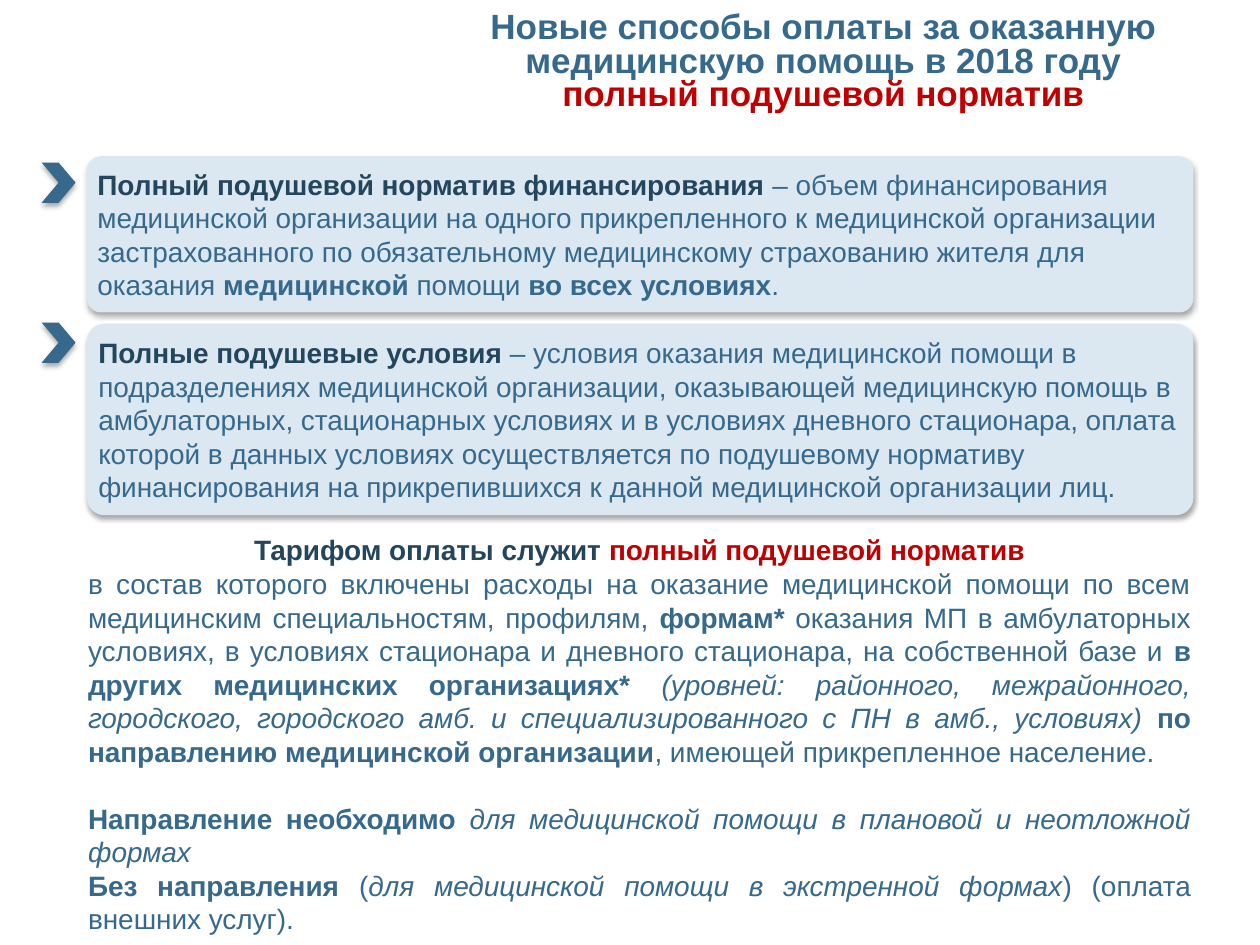
from dataclasses import dataclass

from lxml import etree
from pptx import Presentation
from pptx.dml.color import RGBColor
from pptx.enum import shapes, text
from pptx.util import Pt


@dataclass(frozen=True)
class Theme:
    font: str = "Arial"
    head: int = 20
    body: int = 16
    blue: str = "36698C"
    dark: str = "24465D"
    red: str = "C00000"
    pale: str = "DBE8F1"


theme = Theme()
KIND = shapes.MSO_SHAPE
ALIGN = text.PP_ALIGN
SHADE = (
    '<a:effectLst xmlns:a="http://schemas.openxmlformats.org/drawingml/2006/main">'
    '<a:outerShdw blurRad="38100" dist="22860" dir="5400000" rotWithShape="0">'
    '<a:srgbClr val="000000"><a:alpha val="35000"/></a:srgbClr>'
    "</a:outerShdw></a:effectLst>"
)


def write(frame, runs, size=theme.body, align=ALIGN.LEFT, line=None, before=None):
    """Add a paragraph of (words, style, colour) runs; style holds b and i."""
    frame.word_wrap = True
    para = frame.paragraphs[0]
    if para.runs:
        para = frame.add_paragraph()
    para.alignment = align
    if line:
        para.line_spacing = line
    if before:
        para.space_before = Pt(before)
    for words, style, tone in runs:
        run = para.add_run()
        run.text = words
        font = run.font
        font.name, font.size = theme.font, Pt(size)
        font.bold, font.italic = "b" in style, "i" in style
        font.color.rgb = RGBColor.from_string(tone)


def draw(kind, left, top, width, height, fill):
    """Add a borderless filled shape with a soft shadow below it."""
    shape = slide.shapes.add_shape(kind, Pt(left), Pt(top), Pt(width), Pt(height))
    shape.fill.solid()
    shape.fill.fore_color.rgb = RGBColor.from_string(fill)
    shape.line.fill.background()
    shape._element.spPr.append(etree.fromstring(SHADE))
    return shape


deck = Presentation()
deck.slide_width, deck.slide_height = Pt(720), Pt(540)
slide = deck.slides.add_slide(deck.slide_layouts[6])
blue, dark, red = theme.blue, theme.dark, theme.red

# Title
title = slide.shapes.add_textbox(Pt(234.7), Pt(3.6), Pt(471.6), Pt(85)).text_frame
for words, tone in [
    ("Новые способы оплаты за оказанную медицинскую помощь в 2018 году", blue),
    ("полный подушевой норматив", red),
]:
    write(title, [(words, "b", tone)], size=theme.head, align=ALIGN.CENTER, line=0.8)

# Definitions: marker top, card top, card height, runs
cards = [
    (92.9, 89.3, 89.3, [
        ("Полный подушевой норматив финансирования ", "b", dark),
        ("– объем финансирования медицинской организации на одного "
         "прикрепленного к медицинской организации застрахованного по "
         "обязательному медицинскому страхованию жителя для оказания ", "", blue),
        ("медицинской ", "b", blue),
        ("помощи ", "", blue),
        ("во всех условиях", "b", blue),
        (".", "", blue),
    ]),
    (184.3, 185, 109.4, [
        ("Полные подушевые условия ", "b", dark),
        ("– условия оказания медицинской помощи в подразделениях медицинской "
         "организации, оказывающей медицинскую помощь в амбулаторных, "
         "стационарных условиях и в условиях дневного стационара, оплата "
         "которой в данных условиях осуществляется по подушевому нормативу "
         "финансирования на прикрепившихся к данной медицинской организации "
         "лиц.", "", blue),
    ]),
]
for mark, top, height, runs in cards:
    draw(KIND.CHEVRON, 23.8, mark, 19.4, 23, blue)
    card = draw(KIND.ROUNDED_RECTANGLE, 49.7, top, 632.2, height, theme.pale)
    card.adjustments[0] = 0.09
    frame = card.text_frame
    frame.vertical_anchor = text.MSO_ANCHOR.MIDDLE
    frame.margin_left = frame.margin_right = Pt(3.6)
    frame.margin_top = frame.margin_bottom = Pt(3.6)
    write(frame, runs)

# Tariff and referral rules
body = slide.shapes.add_textbox(Pt(43.2), Pt(301), Pt(644.4), Pt(239.8)).text_frame
write(body, [
    ("Тарифом оплаты служит ", "b", dark),
    ("полный подушевой норматив", "b", red),
], align=ALIGN.CENTER)
write(body, [
    ("в состав которого включены расходы на оказание медицинской помощи по всем "
     "медицинским специальностям, профилям, ", "", blue),
    ("формам* ", "b", blue),
    ("оказания МП в амбулаторных условиях, в условиях стационара и дневного "
     "стационара, на собственной базе и ", "", blue),
    ("в других медицинских организациях* ", "b", blue),
    ("(уровней: районного, межрайонного, городского, городского амб. и "
     "специализированного с ПН в амб., условиях) ", "i", blue),
    ("по направлению медицинской организации", "b", blue),
    (", имеющей прикрепленное население.", "", blue),
], align=ALIGN.JUSTIFY)
write(body, [
    ("Направление необходимо ", "b", blue),
    ("для медицинской помощи в плановой и неотложной формах", "i", blue),
], align=ALIGN.JUSTIFY, before=19)
write(body, [
    ("Без направления ", "b", blue),
    ("(", "", blue),
    ("для медицинской помощи в экстренной формах", "i", blue),
    (") (оплата внешних услуг).", "", blue),
], align=ALIGN.JUSTIFY)

deck.save("out.pptx")
